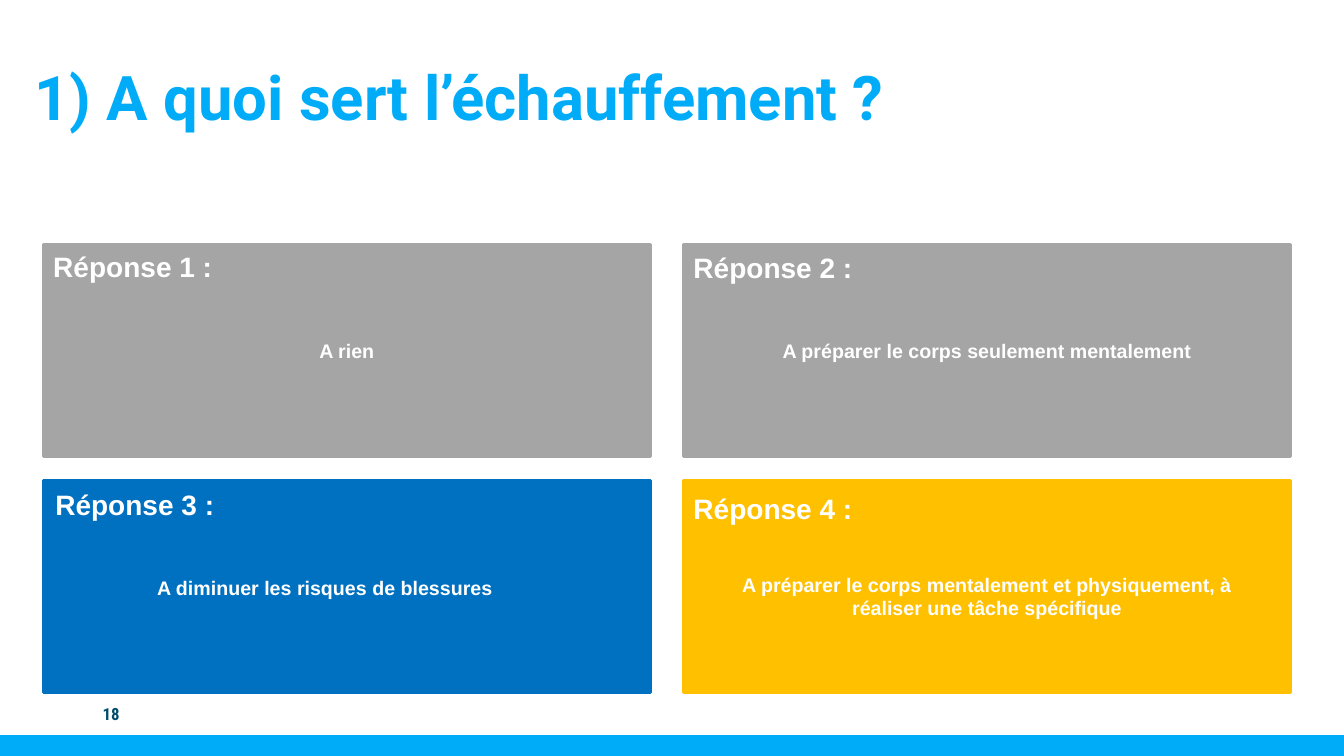
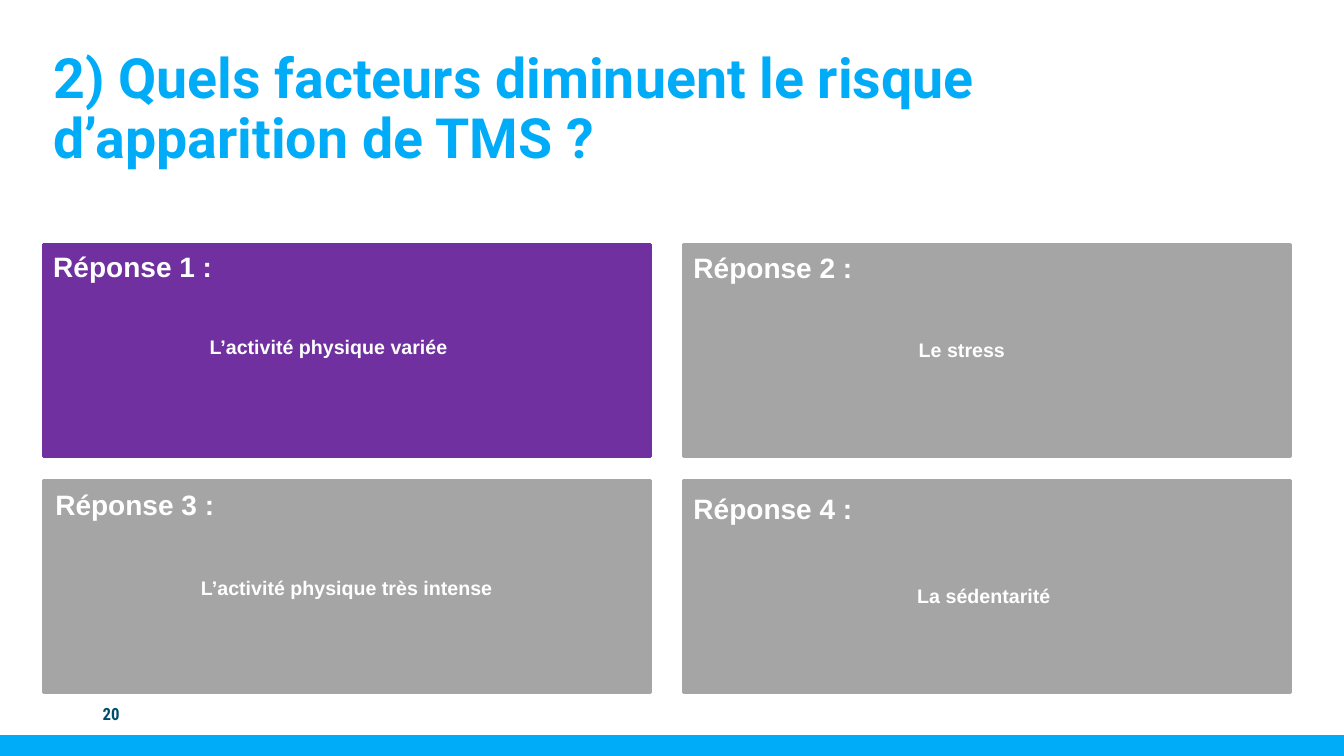
from dataclasses import dataclass
from typing import Optional

from lxml import etree
from pptx import Presentation
from pptx.dml.color import RGBColor
from pptx.enum.shapes import MSO_CONNECTOR, MSO_SHAPE
from pptx.enum.text import MSO_ANCHOR, MSO_AUTO_SIZE, PP_ALIGN
from pptx.oxml.ns import qn
from pptx.slide import Slide
from pptx.text.text import TextFrame
from pptx.util import Inches, Pt

RECTANGLE = MSO_SHAPE.RECTANGLE
STRAIGHT = MSO_CONNECTOR.STRAIGHT
LEFT, CENTER = PP_ALIGN.LEFT, PP_ALIGN.CENTER
TOP, MIDDLE, BOTTOM = MSO_ANCHOR.TOP, MSO_ANCHOR.MIDDLE, MSO_ANCHOR.BOTTOM
GROW, FIXED = MSO_AUTO_SIZE.SHAPE_TO_FIT_TEXT, MSO_AUTO_SIZE.NONE


@dataclass(frozen=True)
class TextStyle:
    font: str
    size: float
    color: str


@dataclass(frozen=True)
class Theme:
    accent: str = "00ACF8"
    gray: str = "A5A5A5"
    blue: str = "0070C0"
    yellow: str = "FFC000"
    purple: str = "7030A0"
    number: TextStyle = TextStyle("Roboto Condensed", 12, "004D6B")
    label: TextStyle = TextStyle("Arial", 20, "FFFFFF")
    answer: TextStyle = TextStyle("Arial", 14, "FFFFFF")
    card_border: float = 2
    band_height: float = 15

    def title(self, size: float) -> TextStyle:
        return TextStyle("Roboto", size, self.accent)


@dataclass(frozen=True)
class Box:
    left: float
    top: float
    width: float
    height: float

    def lengths(self) -> tuple:
        return tuple(Inches(value) for value in
                     (self.left, self.top, self.width, self.height))


@dataclass(frozen=True)
class Answer:
    text: str
    color: str
    box: Optional[Box] = None  # without a box the text sits inside the card
    align: PP_ALIGN = CENTER


@dataclass(frozen=True)
class Question:
    number: int
    title: str
    title_size: float
    title_box: Box
    answers: tuple[Answer, ...]


THEME = Theme()
SLIDE_WIDTH, SLIDE_HEIGHT = 13.33, 7.5
BAND_CENTER = 7.4
NUMBER_BOX = Box(0.92, 6.88, 0.65, 0.4)

# Two by two grid of cards, with one label box for each
CARD_WIDTH, CARD_HEIGHT = 6.02, 2.1
CARDS = [Box(left, top, CARD_WIDTH, CARD_HEIGHT)
         for top in (2.43, 4.77) for left in (0.43, 6.78)]
LABELS = [Box(0.43, 2.43, 3.1, 0.44), Box(6.78, 2.44, 2.57, 0.44),
          Box(0.45, 4.79, 2.58, 0.44), Box(6.78, 4.83, 3.43, 0.44)]

QUESTIONS = (
    Question(18, "1) A quoi sert l’échauffement ?", 44, Box(0.24, 0.29, 11.5, 1.09), (
        Answer("A rien", THEME.gray),
        Answer("A préparer le corps seulement mentalement", THEME.gray),
        Answer("A diminuer les risques de blessures", THEME.blue,
               Box(1.46, 5.66, 3.96, 0.34), LEFT),
        Answer("A préparer le corps mentalement et physiquement, à réaliser "
               "une tâche spécifique", THEME.yellow, Box(7.07, 5.63, 5.44, 0.57)),
    )),
    Question(20, "2) Quels facteurs diminuent le risque d’apparition de TMS ?", 39.6,
             Box(0.43, 0.36, 11.5, 1.38), (
        Answer("L’activité physique variée", THEME.purple,
               Box(1.98, 3.27, 2.97, 0.34), LEFT),
        Answer("Le stress", THEME.gray, Box(8.49, 3.3, 2.1, 0.34)),
        Answer("L’activité physique très intense", THEME.gray,
               Box(1.1, 5.66, 4.68, 0.34)),
        Answer("La sédentarité ", THEME.gray, Box(8.59, 5.74, 2.39, 0.34)),
    )),
)


def write_text(frame: TextFrame, text: str, style: TextStyle, align: PP_ALIGN = LEFT,
               anchor: MSO_ANCHOR = TOP, auto_size: MSO_AUTO_SIZE = FIXED,
               line_spacing: float = 1.0) -> None:
    paragraph = frame.paragraphs[0]
    run = paragraph.add_run()
    run.text = text
    formats = {
        frame: {"word_wrap": True, "auto_size": auto_size, "vertical_anchor": anchor},
        paragraph: {"alignment": align, "line_spacing": line_spacing},
        run.font: {"name": style.font, "size": Pt(style.size), "bold": True},
    }
    for target, values in formats.items():
        for name, value in values.items():
            setattr(target, name, value)
    run.font.color.rgb = RGBColor.from_string(style.color)


def add_text(slide: Slide, box: Box, text: str, style: TextStyle, **options) -> None:
    shape = slide.shapes.add_textbox(*box.lengths())
    write_text(shape.text_frame, text, style, **options)


def add_band(slide: Slide) -> None:
    band = slide.shapes.add_connector(STRAIGHT, Inches(0), Inches(BAND_CENTER),
                                      Inches(SLIDE_WIDTH), Inches(BAND_CENTER))
    band.line.color.rgb = RGBColor.from_string(THEME.accent)
    band.line.width = Pt(THEME.band_height)
    etree.SubElement(band.line._get_or_add_ln().getparent(), qn("a:effectLst"))


def add_card(slide: Slide, box: Box, answer: Answer) -> None:
    card = slide.shapes.add_shape(RECTANGLE, *box.lengths())
    color = RGBColor.from_string(answer.color)
    card.shadow.inherit = False
    card.fill.solid()
    card.fill.fore_color.rgb = color
    card.line.color.rgb = color
    card.line.width = Pt(THEME.card_border)
    if answer.box is None:
        write_text(card.text_frame, answer.text, THEME.answer, answer.align, MIDDLE)
    else:
        add_text(slide, answer.box, answer.text, THEME.answer,
                 align=answer.align, auto_size=GROW)


def add_question(presentation: Presentation, question: Question) -> None:
    slide = presentation.slides.add_slide(presentation.slide_layouts[6])
    # Band, title and slide number
    add_band(slide)
    add_text(slide, question.title_box, question.title, THEME.title(question.title_size),
             anchor=BOTTOM, line_spacing=0.9)
    add_text(slide, NUMBER_BOX, str(question.number), THEME.number, anchor=MIDDLE)
    # Answer cards
    for index, (card, label, answer) in enumerate(
            zip(CARDS, LABELS, question.answers), start=1):
        add_card(slide, card, answer)
        add_text(slide, label, f"Réponse {index} :", THEME.label, auto_size=GROW)


def main() -> None:
    presentation = Presentation()
    presentation.slide_width = Inches(SLIDE_WIDTH)
    presentation.slide_height = Inches(SLIDE_HEIGHT)
    for question in QUESTIONS:
        add_question(presentation, question)
    presentation.save("out.pptx")


if __name__ == "__main__":
    main()
